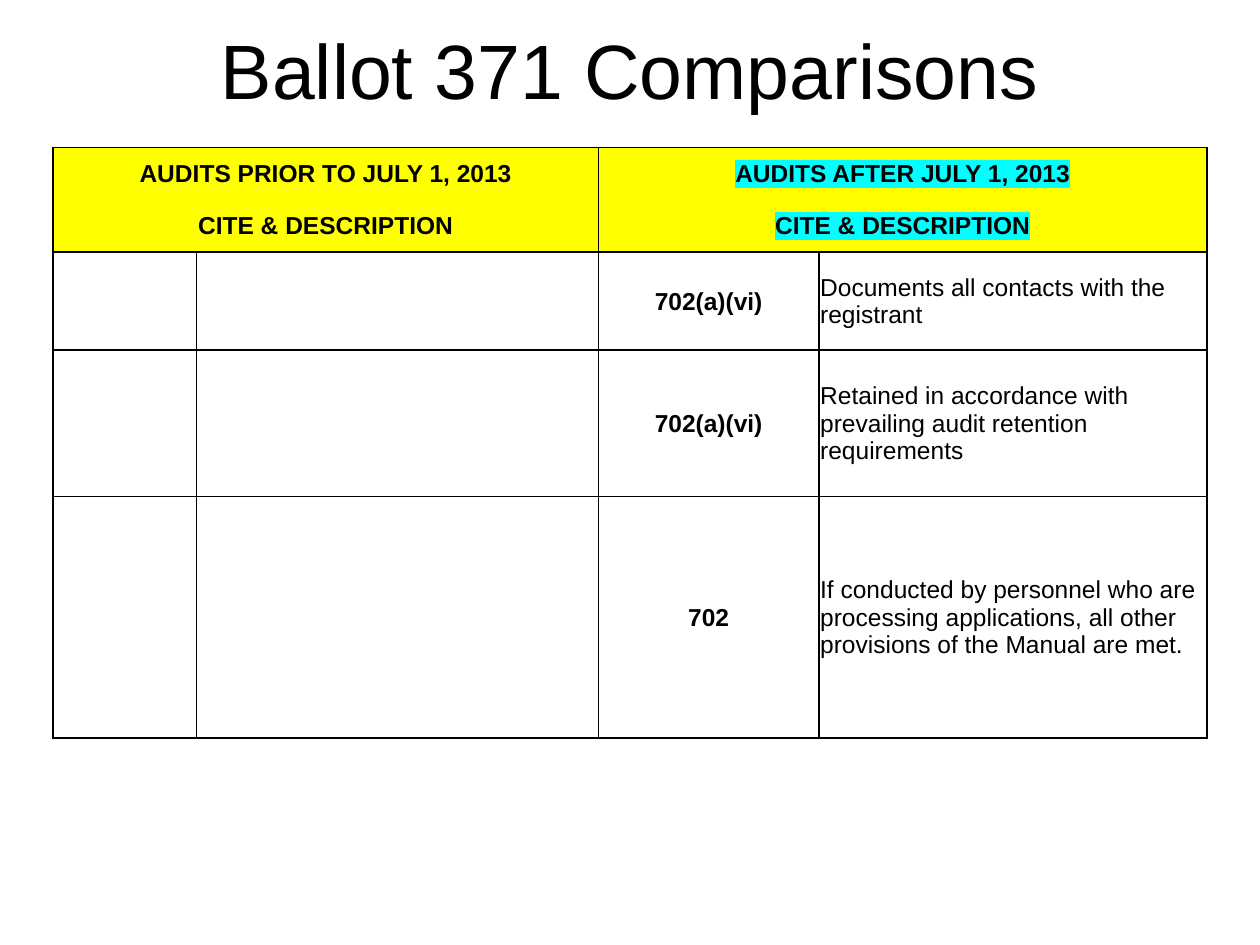
from lxml import etree
from pptx import Presentation
from pptx.dml.color import RGBColor
from pptx.enum import text
from pptx.oxml import ns
from pptx.util import Inches, Pt

BLACK = RGBColor(0, 0, 0)
YELLOW = RGBColor(0xFF, 0xFF, 0)
CYAN = RGBColor(0, 0xFF, 0xFF)
COLUMN_WIDTHS = [1.14, 3.19, 1.75, 3.08]
ROW_HEIGHTS = [0.41, 0.42, 0.78, 1.16, 1.92]
HEADINGS = [
    ("AUDITS PRIOR TO JULY 1, 2013", "AUDITS AFTER JULY 1, 2013"),
    ("CITE & DESCRIPTION", "CITE & DESCRIPTION"),
]
PROVISIONS = [
    ("702(a)(vi)", "Documents all contacts with the registrant"),
    ("702(a)(vi)", "Retained in accordance with prevailing audit retention requirements"),
    ("702", "If conducted by personnel who are processing applications, "
            "all other provisions of the Manual are met."),
]


def set_borders(cell, hidden=""):
    """Draw thin black cell borders, except on the hidden sides."""
    properties = cell._tc.get_or_add_tcPr()
    for index, side in enumerate("LRTB"):
        line = etree.Element(ns.qn(f"a:ln{side}"), w=str(Pt(1)))
        if side in hidden:
            etree.SubElement(line, ns.qn("a:noFill"))
        else:
            fill = etree.SubElement(line, ns.qn("a:solidFill"))
            etree.SubElement(fill, ns.qn("a:srgbClr"), val=str(BLACK))
        properties.insert(index, line)


def write_cell(cell, words, bold, centered, highlight=None):
    cell.vertical_anchor = text.MSO_ANCHOR.MIDDLE
    cell.margin_left = cell.margin_right = cell.margin_top = Inches(0.01)
    cell.margin_bottom = 0
    para = cell.text_frame.paragraphs[0]
    para.alignment = text.PP_ALIGN.CENTER if centered else text.PP_ALIGN.LEFT
    span = para.add_run()
    span.text = words
    para.font.name = "Arial"
    para.font.size = Pt(14)
    para.font.bold = bold
    para.font.color.rgb = BLACK
    if highlight is not None:
        mark = etree.SubElement(span._r.get_or_add_rPr(), ns.qn("a:highlight"))
        etree.SubElement(mark, ns.qn("a:srgbClr"), val=str(highlight))


deck = Presentation()
deck.slide_width, deck.slide_height = Inches(10), Inches(7.5)
page = deck.slides.add_slide(deck.slide_layouts[5])

# Title
title = page.shapes.title
title.left, title.top = Inches(0.75), Inches(0.17)
title.width, title.height = Inches(8.5), Inches(0.75)
title.text_frame.text = "Ballot 371 Comparisons"
title.text_frame.vertical_anchor = text.MSO_ANCHOR.MIDDLE
para = title.text_frame.paragraphs[0]
para.alignment = text.PP_ALIGN.CENTER
para.font.name = "Arial"
para.font.size = Pt(44)
para.font.color.rgb = BLACK

# Table grid
table = page.shapes.add_table(
    len(ROW_HEIGHTS), len(COLUMN_WIDTHS), Inches(0.42), Inches(1.17),
    Inches(sum(COLUMN_WIDTHS)), Inches(sum(ROW_HEIGHTS))).table
table.first_row = table.horz_banding = False
for column, width in zip(table.columns, COLUMN_WIDTHS):
    column.width = Inches(width)
for row, height in zip(table.rows, ROW_HEIGHTS):
    row.height = Inches(height)

# Borders and fills: the two heading rows read as one block
for row_index in range(len(ROW_HEIGHTS)):
    for column_index in range(len(COLUMN_WIDTHS)):
        cell = table.cell(row_index, column_index)
        set_borders(cell, {0: "B", 1: "T"}.get(row_index, ""))
        if row_index < len(HEADINGS):
            cell.fill.solid()
            cell.fill.fore_color.rgb = YELLOW
        else:
            cell.fill.background()

# Headings, each across two columns
for row_index, headings in enumerate(HEADINGS):
    for half, (words, highlight) in enumerate(zip(headings, (YELLOW, CYAN))):
        cell = table.cell(row_index, 2 * half)
        cell.merge(table.cell(row_index, 2 * half + 1))
        write_cell(cell, words, True, True, highlight)

# New provisions
for row_index, (cite, description) in enumerate(PROVISIONS, len(HEADINGS)):
    write_cell(table.cell(row_index, 2), cite, True, True)
    write_cell(table.cell(row_index, 3), description, False, False)

deck.save("out.pptx")
